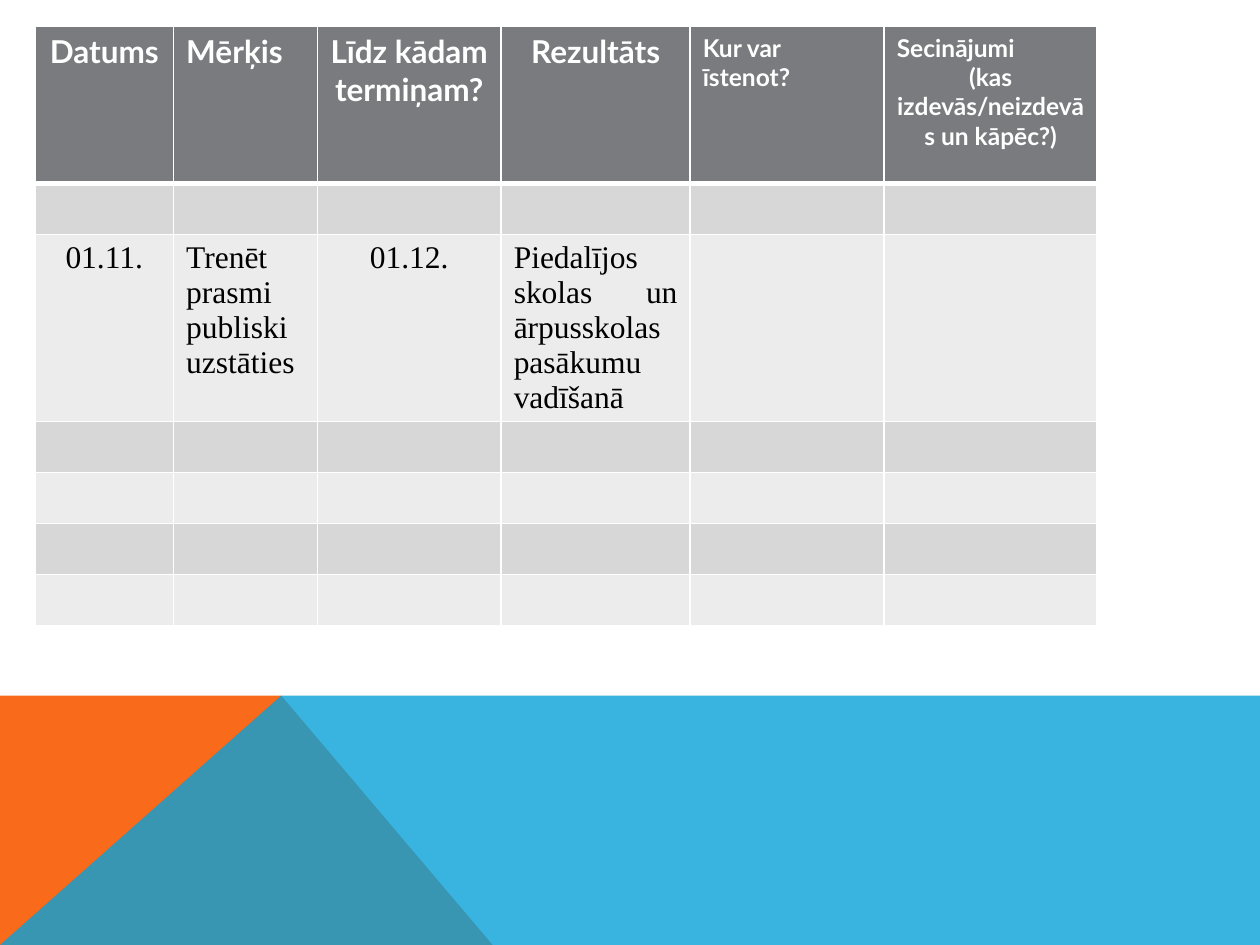
from lxml.etree import SubElement as Sub
from pptx import Presentation
from pptx.dml.color import RGBColor as Color
from pptx.enum.text import PP_ALIGN as Align
from pptx.oxml.ns import qn
from pptx.util import Pt

WHITE = Color(0xFF, 0xFF, 0xFF)
BLACK = Color(0, 0, 0)
GREY = Color(0x79, 0x7B, 0x7E)
DARK = Color(0xD7, 0xD7, 0xD8)
LIGHT = Color(0xEC, 0xEC, 0xEC)
ORANGE = Color(0xF9, 0x6A, 0x1B)
BLUE = Color(0x08, 0xA1, 0xD9)

WIDE, HIGH = 720, 540
TOP, PEAK = 397.5, 160.7
COLS = [79.2, 82.1, 105.1, 108, 110.9, 121.7]
ROWS = [89.5, 28.8, 106.6] + [28.8] * 4
HEAD = [
    (18, [("Datums", Align.CENTER)]),
    (18, [("Mērķis", Align.LEFT)]),
    (18, [("Līdz kādam termiņam?", Align.CENTER)]),
    (18, [("Rezultāts", Align.CENTER)]),
    (14, [("Kur var īstenot?", Align.LEFT)]),
    (14, [("Secinājumi", Align.LEFT),
          ("(kas izdevās/neizdevās un kāpēc?)", Align.CENTER)]),
]
GOAL = [
    ("01.11.", Align.CENTER),
    ("Trenēt prasmi publiski uzstāties", Align.JUSTIFY),
    ("01.12.", Align.CENTER),
    ("Piedalījos skolas un ārpusskolas pasākumu vadīšanā", Align.JUSTIFY),
]


def add_area(slide, points, color, alpha=100):
    spots = [(Pt(x), Pt(y)) for x, y in points]
    pen = slide.shapes.build_freeform(*spots[0], scale=1)
    pen.add_line_segments(spots[1:], close=True)
    area = pen.convert_to_shape()
    area.shadow.inherit = False
    area.line.fill.background()
    area.fill.solid()
    area.fill.fore_color.rgb = color
    if alpha < 100:
        tint = area.fill._xPr.find(qn("a:solidFill"))[0]
        Sub(tint, qn("a:alpha"), val=str(alpha * 1000))


def set_edges(cell, top, bottom):
    props = cell._tc.get_or_add_tcPr()
    for side, width in zip("LRTB", (1, 1, top, bottom)):
        line = Sub(props, qn(f"a:ln{side}"), w=str(Pt(width)))
        fill = Sub(line, qn("a:solidFill"))
        Sub(fill, qn("a:srgbClr"), val=str(WHITE))


def write(cell, lines, size, face, color, bold):
    frame = cell.text_frame
    frame.text = "\n".join(text for text, _ in lines)
    for para, (_, align) in zip(frame.paragraphs, lines):
        para.alignment = align
        font = para.font
        font.size, font.name, font.bold = Pt(size), face, bold
        font.color.rgb = color


def add_grid(slide):
    frame = slide.shapes.add_table(
        len(ROWS), len(COLS), Pt(20), Pt(15.2), Pt(sum(COLS)), Pt(sum(ROWS)))
    table = frame.table
    for col, width in zip(table.columns, COLS):
        col.width = Pt(width)
    for i, (row, height) in enumerate(zip(table.rows, ROWS)):
        row.height = Pt(height)
        shade = GREY if i == 0 else DARK if i % 2 else LIGHT
        for cell in row.cells:
            set_edges(cell, 3 if i == 1 else 1, 3 if i == 0 else 1)
            cell.fill.solid()
            cell.fill.fore_color.rgb = shade
    for j, (size, lines) in enumerate(HEAD):
        write(table.cell(0, j), lines, size, "Lato", WHITE, True)
    for j, line in enumerate(GOAL):
        write(table.cell(2, j), [line], 18, "Times New Roman", BLACK, False)


def main():
    deck = Presentation()
    deck.slide_width, deck.slide_height = Pt(WIDE), Pt(HIGH)
    slide = deck.slides.add_slide(deck.slide_layouts[6])
    add_area(slide, [(0, HIGH), (0, TOP), (PEAK, TOP), (281.5, HIGH)], ORANGE)
    add_area(slide, [(0, HIGH), (PEAK, TOP), (WIDE, TOP), (WIDE, HIGH)],
             BLUE, 80)
    add_grid(slide)
    deck.save("out.pptx")


if __name__ == "__main__":
    main()
